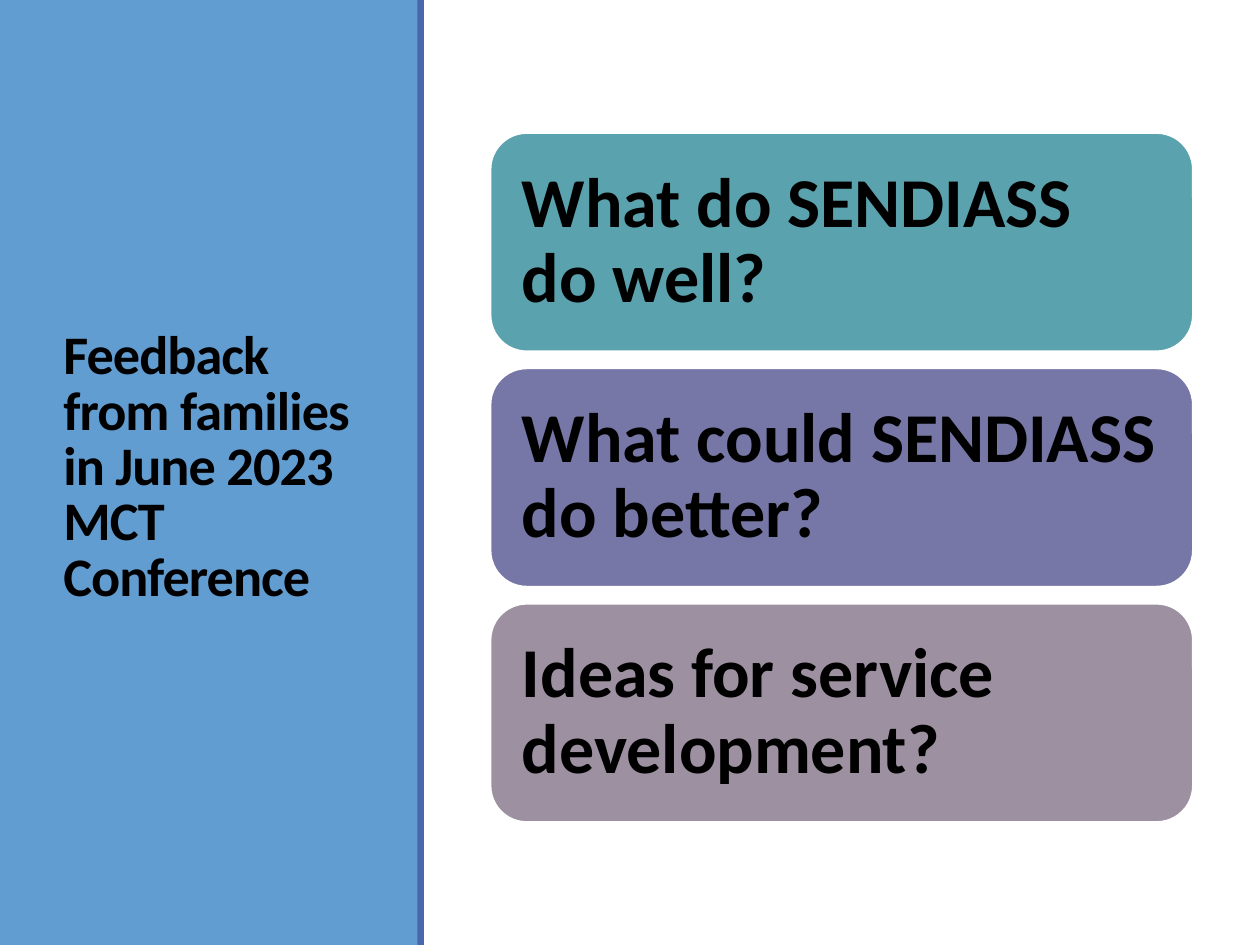
from dataclasses import dataclass

from pptx import Presentation
from pptx.dml.color import RGBColor
from pptx.enum.shapes import MSO_SHAPE
from pptx.enum.text import MSO_ANCHOR, MSO_AUTO_SIZE, PP_ALIGN
from pptx.util import Pt

RECTANGLE = MSO_SHAPE.RECTANGLE
ROUNDED = MSO_SHAPE.ROUNDED_RECTANGLE
MIDDLE = MSO_ANCHOR.MIDDLE
LEFT = PP_ALIGN.LEFT
NO_AUTOFIT = MSO_AUTO_SIZE.NONE
TITLE_ONLY = 5


@dataclass(frozen=True)
class Theme:
    font: str = "Calibri"
    title_size: int = 31
    card_size: int = 40
    text: str = "000000"
    white: str = "FFFFFF"
    panel: str = "629DD1"
    stripe: str = "4A66AC"
    cards: tuple = ("5AA2AE", "7677A6", "9D90A0")


theme = Theme()


def add_block(kind, left, top, width, height, color):
    """Add a flat filled shape without outline or shadow."""
    block = page.shapes.add_shape(kind, Pt(left), Pt(top), Pt(width), Pt(height))
    block.shadow.inherit = False
    block.fill.solid()
    block.fill.fore_color.rgb = RGBColor.from_string(color)
    block.line.fill.background()
    return block


def write_bold(frame, text, size, line_spacing):
    frame.word_wrap = True
    frame.auto_size = NO_AUTOFIT
    frame.vertical_anchor = MIDDLE
    para = frame.paragraphs[0]
    para.text = text
    para.alignment = LEFT
    para.line_spacing = line_spacing
    para.font.name = theme.font
    para.font.size = Pt(size)
    para.font.bold = True
    para.font.color.rgb = RGBColor.from_string(theme.text)
    return para


deck = Presentation()
deck.slide_width, deck.slide_height = Pt(720), Pt(540)
page = deck.slides.add_slide(deck.slide_layouts[TITLE_ONLY])
page.background.fill.solid()
page.background.fill.fore_color.rgb = RGBColor.from_string(theme.white)

# Left panel, with the title raised above it
panel = add_block(RECTANGLE, 0, 0, 239, 540, theme.panel)
add_block(RECTANGLE, 238.5, 0, 3.75, 540, theme.stripe)

title = page.shapes.title
title.left, title.top, title.width, title.height = Pt(29), Pt(41), Pt(182), Pt(454)
heading = write_bold(title.text_frame, "Feedback from families in June 2023 MCT Conference",
                     theme.title_size, 0.85)
heading.runs[0].font._element.set("spc", "-50")
panel._element.addnext(title._element)

# Question cards
questions = (
    "What do SENDIASS do well?",
    "What could SENDIASS do better?",
    "Ideas for service development?",
)
card_top, card_height, card_pitch = 75.9, 125, 134.5
for index, (question, color) in enumerate(zip(questions, theme.cards)):
    card = add_block(ROUNDED, 280.2, card_top + index * card_pitch, 401.6, card_height, color)
    card.line.color.rgb = RGBColor.from_string(theme.white)
    card.line.width = Pt(1.25)
    frame = card.text_frame
    frame.margin_left = frame.margin_right = Pt(12)
    frame.margin_top = frame.margin_bottom = Pt(12)
    write_bold(frame, question, theme.card_size, 0.9)

deck.save("out.pptx")
